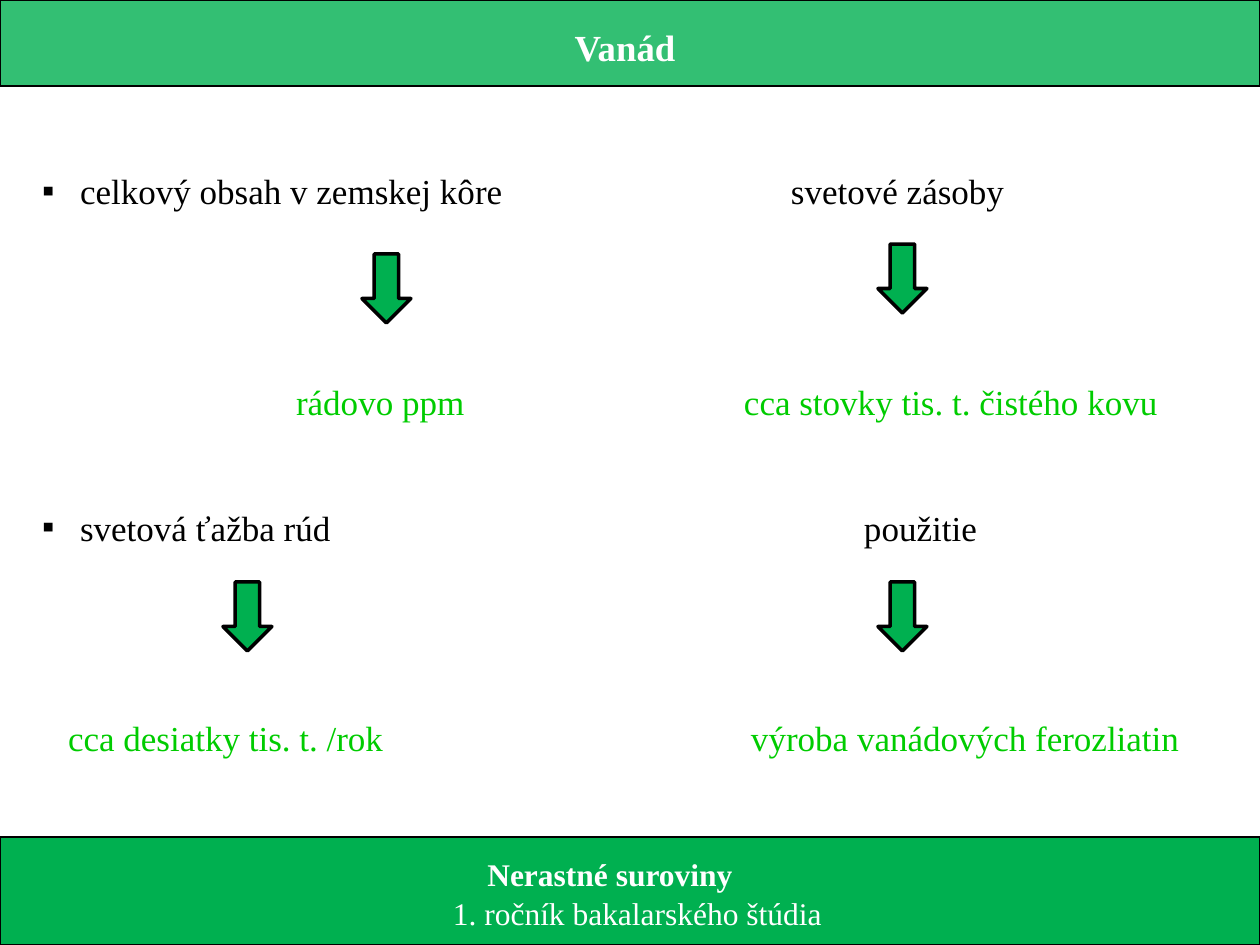
from dataclasses import dataclass

from lxml.etree import SubElement
from pptx import Presentation
from pptx.dml.color import RGBColor
from pptx.enum.shapes import MSO_SHAPE
from pptx.enum.text import MSO_ANCHOR, MSO_AUTO_SIZE, PP_ALIGN
from pptx.oxml.ns import qn
from pptx.util import Pt

EMU_PER_PX = 914400 / 126
SLIDE_SIZE = (1260, 945)


@dataclass(frozen=True)
class Theme:
    font: str = "Times New Roman"
    green: str = "00B050"
    value: str = "00CC00"
    black: str = "000000"
    white: str = "FFFFFF"
    title_size: int = 21
    body_size: int = 20
    footer_size: int = 18
    body_leading: int = 24
    footer_leading: int = 22


THEME = Theme()

# Each entry: text, left indent in px, empty lines above, is it a value
LEFT_COLUMN = [
    ("celkový obsah v zemskej kôre", 38, 0, False),
    ("rádovo ppm", 254, 4, True),
    ("svetová ťažba rúd", 38, 2, False),
    ("cca desiatky tis. t. /rok", 26, 4, True),
]
RIGHT_COLUMN = [
    ("svetové zásoby", 51, 0, False),
    ("cca stovky tis. t. čistého kovu", 4, 4, True),
    ("použitie", 124, 2, False),
    ("výroba vanádových ferozliatin", 11, 4, True),
]
ARROW_CORNERS = [(362, 254), (878, 244), (223, 582), (878, 582)]
ARROW_SIZE = (49, 69)


def px(*lengths):
    return [round(length * EMU_PER_PX) for length in lengths]


def apply(target, formats):
    for name, value in formats.items():
        setattr(target, name, value)


def set_frame(frame, anchor, left=0, top=0, right=0):
    left, top, right = px(left, top, right)
    apply(frame, {
        "word_wrap": True, "auto_size": MSO_AUTO_SIZE.NONE,
        "vertical_anchor": anchor, "margin_left": left,
        "margin_top": top, "margin_right": right, "margin_bottom": 0,
    })


def write(paragraph, text, size, color, bold=False, indent=0, **formats):
    run = paragraph.add_run()
    run.text = text
    apply(run.font, {"name": THEME.font, "size": Pt(size), "bold": bold})
    run.font.color.rgb = RGBColor.from_string(color)
    apply(paragraph, formats)
    if indent:
        paragraph._p.get_or_add_pPr().set("marL", str(px(indent)[0]))


def add_bullet(paragraph, hang):
    properties = paragraph._p.get_or_add_pPr()
    properties.set("indent", str(-px(hang)[0]))
    SubElement(properties, qn("a:buFont"), typeface=THEME.font)
    SubElement(properties, qn("a:buChar"), char="▪")


def paint(shape, line_width, opacity=100):
    shape.fill.solid()
    shape.fill.fore_color.rgb = RGBColor.from_string(THEME.green)
    if opacity < 100:
        color = shape._element.spPr.find(qn("a:solidFill"))[0]
        SubElement(color, qn("a:alpha"), val=str(opacity * 1000))
    shape.line.color.rgb = RGBColor.from_string(THEME.black)
    shape.line.width = Pt(line_width)


def add_preset(slide, preset, box, line_width):
    shape = slide.shapes.add_shape(preset, *px(*box))
    shape.shadow.inherit = False
    paint(shape, line_width)
    return shape


def format_title(title):
    left, top, width, height = px(0, 0, 1260, 86)
    apply(title, {"left": left, "top": top, "width": width, "height": height})
    paint(title, 0.75, opacity=80)
    set_frame(title.text_frame, MSO_ANCHOR.MIDDLE, top=8, right=10)
    write(title.text_frame.paragraphs[0], "Vanád", THEME.title_size,
          THEME.white, bold=True, alignment=PP_ALIGN.CENTER)


def add_footer(slide):
    band = add_preset(slide, MSO_SHAPE.RECTANGLE, (0, 837, 1260, 108), 0.75)
    frame = band.text_frame
    set_frame(frame, MSO_ANCHOR.MIDDLE, top=4, right=40)
    formats = {"alignment": PP_ALIGN.CENTER,
               "line_spacing": Pt(THEME.footer_leading)}
    write(frame.paragraphs[0], "Nerastné suroviny", THEME.footer_size,
          THEME.white, bold=True, **formats)
    write(frame.add_paragraph(), "1. ročník bakalarského štúdia",
          THEME.footer_size, THEME.white, indent=55, **formats)


def add_column(slide, box, entries, bulleted=False):
    frame = slide.shapes.add_textbox(*px(*box)).text_frame
    set_frame(frame, MSO_ANCHOR.TOP, top=52)
    for index, (text, indent, lines_above, is_value) in enumerate(entries):
        paragraph = frame.add_paragraph() if index else frame.paragraphs[0]
        write(paragraph, text, THEME.body_size,
              THEME.value if is_value else THEME.black, indent=indent,
              alignment=PP_ALIGN.LEFT,
              line_spacing=Pt(THEME.body_leading),
              space_before=Pt(lines_above * THEME.body_leading))
        if bulleted and not is_value:
            add_bullet(paragraph, indent)


def main():
    presentation = Presentation()
    width, height = px(*SLIDE_SIZE)
    apply(presentation, {"slide_width": width, "slide_height": height})
    slide = presentation.slides.add_slide(presentation.slide_layouts[5])
    format_title(slide.shapes.title)
    add_footer(slide)
    add_column(slide, (42, 118, 688, 653), LEFT_COLUMN, bulleted=True)
    add_column(slide, (740, 118, 474, 653), RIGHT_COLUMN)
    for corner in ARROW_CORNERS:
        add_preset(slide, MSO_SHAPE.DOWN_ARROW, corner + ARROW_SIZE, 2)
    presentation.save("out.pptx")


if __name__ == "__main__":
    main()
